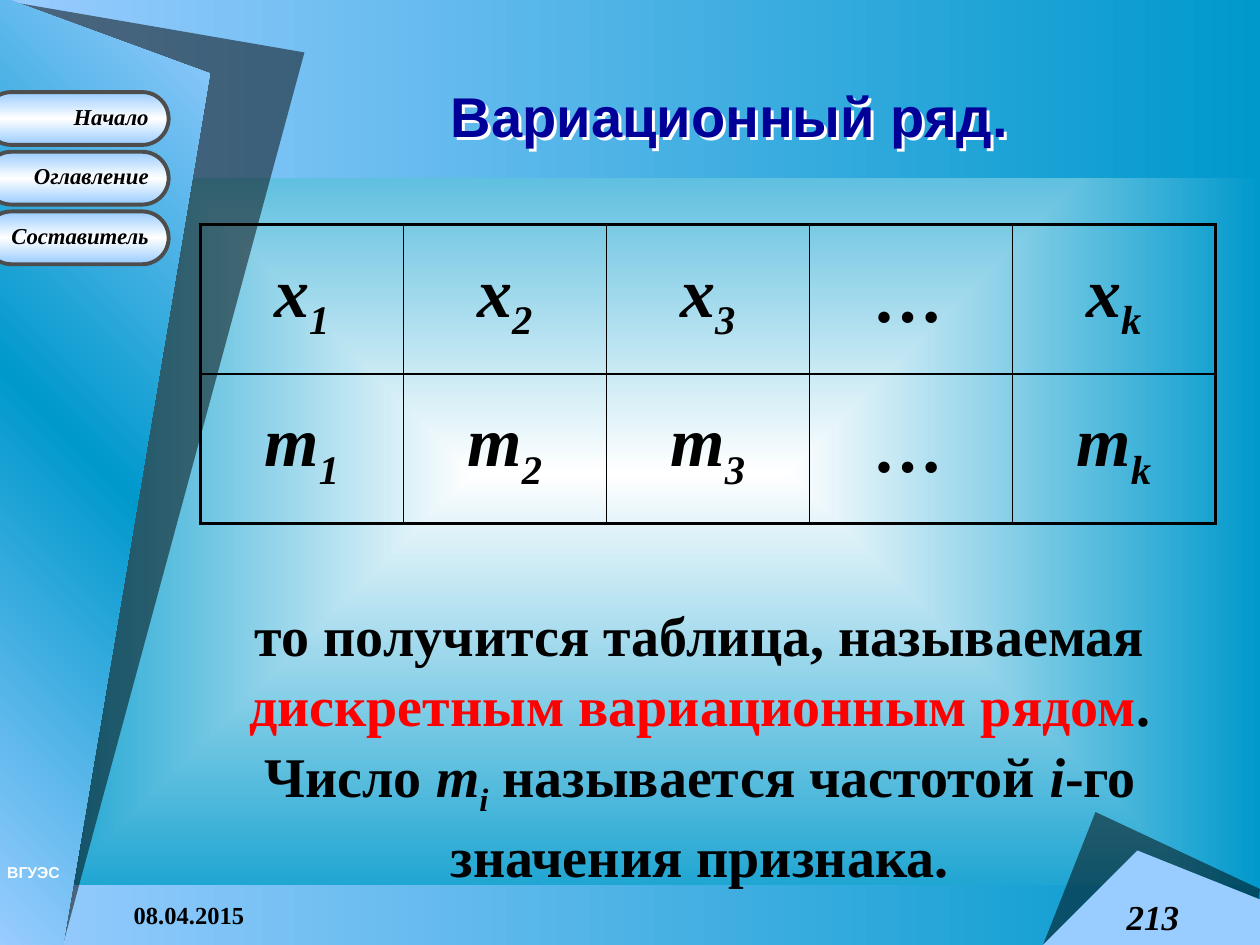
from dataclasses import dataclass

from lxml.etree import SubElement
from pptx import Presentation
from pptx.dml.color import RGBColor
from pptx.enum.shapes import MSO_SHAPE as Preset
from pptx.enum.text import MSO_ANCHOR as Anchor, PP_ALIGN as Align
from pptx.oxml.ns import qn
from pptx.util import Pt


@dataclass(frozen=True)
class Theme:
    sky: str = "99CCFF"
    sea: str = "0099CC"
    white: str = "FFFFFF"
    black: str = "000000"
    outline: str = "4D4D4D"
    heading: str = "000099"
    accent: str = "FF0000"
    sans: str = "Arial"
    serif: str = "Times New Roman"
    title_size: int = 32
    body_size: int = 32
    cell_size: int = 40
    number_size: int = 20
    date_size: int = 14
    button_size: int = 13
    mark_size: int = 9


THEME = Theme()
WIDTH, HEIGHT = 720, 540


def rgb(color):
    return RGBColor.from_string(color)


def set_gradient(grad, colors, angle=None):
    """Spread colors evenly; without an angle they run outward from the centre."""
    for child in list(grad):
        grad.remove(child)
    stops = SubElement(grad, qn("a:gsLst"))
    for i, color in enumerate(colors):
        stop = SubElement(stops, qn("a:gs"), pos=str(100000 * i // (len(colors) - 1)))
        SubElement(stop, qn("a:srgbClr"), val=color)
    if angle is None:
        focus = SubElement(grad, qn("a:path"), {"path": "shape"})
        SubElement(focus, qn("a:fillToRect"), dict.fromkeys("ltrb", "50000"))
    else:
        SubElement(grad, qn("a:lin"), ang=str(angle * 60000), scaled="0")


def paint(shape, colors, angle=0, alpha=None):
    shape.shadow.inherit = False
    shape.line.fill.background()
    if len(colors) > 1:
        shape.fill.gradient()
        set_gradient(shape.element.spPr.find(qn("a:gradFill")), colors, angle)
        return
    shape.fill.solid()
    shape.fill.fore_color.rgb = rgb(colors[0])
    if alpha:
        color = shape.element.spPr.find(qn("a:solidFill"))[0]
        SubElement(color, qn("a:alpha"), val=str(alpha * 1000))


def add_band(slide, top, height):
    band = slide.shapes.add_shape(Preset.RECTANGLE, 0, Pt(top), Pt(WIDTH), Pt(height))
    paint(band, [THEME.sky, THEME.sea])


def add_polygon(slide, points, colors, **look):
    builder = slide.shapes.build_freeform(*points[0], scale=Pt(1))
    builder.add_line_segments(points[1:], close=True)
    paint(builder.convert_to_shape(), colors, **look)


def style(paragraph, size, color=THEME.black, face=THEME.serif, bold=True,
          italic=None, align=Align.CENTER):
    paragraph.alignment = align
    font = paragraph.font
    font.name, font.size, font.bold, font.italic = face, Pt(size), bold, italic
    font.color.rgb = rgb(color)


def add_run(paragraph, text, subscript=False, italic=None, color=None):
    run = paragraph.add_run()
    run.text = text
    if italic:
        run.font.italic = True
    if color:
        run.font.color.rgb = rgb(color)
    if subscript:
        run.font._element.set("baseline", "-25000")


def add_text(slide, box, text, size, anchor=Anchor.TOP, wrap=True, **look):
    frame = slide.shapes.add_textbox(*map(Pt, box)).text_frame
    frame.word_wrap, frame.vertical_anchor = wrap, anchor
    paragraph = frame.paragraphs[0]
    paragraph.text = text
    style(paragraph, size, **look)
    return paragraph


def add_button(slide, top, label):
    button = slide.shapes.add_shape(Preset.ROUNDED_RECTANGLE,
                                    Pt(-8.6), Pt(top), Pt(105), Pt(30.2))
    button.adjustments[0] = 0.5
    paint(button, [THEME.sky, THEME.white, THEME.sky], angle=90)
    button.line.color.rgb = rgb(THEME.outline)
    button.line.width = Pt(2.25)
    frame = button.text_frame
    frame.word_wrap, frame.vertical_anchor = False, Anchor.MIDDLE
    paragraph = frame.paragraphs[0]
    paragraph.text = label
    paragraph.line_spacing = 0.8
    style(paragraph, THEME.button_size, italic=True, align=Align.RIGHT)


def add_backdrop(slide):
    slide.background.fill.gradient()
    set_gradient(slide.element.find(".//" + qn("a:gradFill")), [THEME.white, THEME.sea])
    # Footer band with the page corner
    add_band(slide, 505.5, 34.5)
    add_polygon(slide, [(626.5, 464.5), (WIDTH, 508.5), (715.5, HEIGHT), (596, HEIGHT)],
                [THEME.black], alpha=50)
    add_polygon(slide, [(596, HEIGHT), (650, 486.5), (WIDTH, 514), (WIDTH, HEIGHT)],
                [THEME.sky])
    # Header band with the left wedge
    add_band(slide, 0, 102)
    add_polygon(slide, [(0, 0), (174, 30), (36, HEIGHT), (0, HEIGHT)],
                [THEME.black], alpha=50)
    add_polygon(slide, [(0, -1.5), (119.5, 41.5), (36, HEIGHT), (0, HEIGHT)],
                [THEME.sky, THEME.sea, THEME.sky], angle=315)


def add_title(slide, text):
    title = slide.shapes.title
    title.left, title.top, title.width, title.height = map(Pt, (111, 9.5, 612, 79))
    title.element.getparent().append(title.element)
    title.text_frame.vertical_anchor = Anchor.BOTTOM
    paragraph = title.text_frame.paragraphs[0]
    paragraph.text = text
    style(paragraph, THEME.title_size, THEME.heading, THEME.sans)
    # White shadow behind the letters
    effects = SubElement(title.element.spPr, qn("a:effectLst"))
    shadow = SubElement(effects, qn("a:outerShdw"), dist=str(Pt(2.5)), dir="2700000")
    SubElement(shadow, qn("a:srgbClr"), val=THEME.white)


def set_borders(cell, widths):
    properties = cell._tc.get_or_add_tcPr()
    for i, (side, width) in enumerate(widths.items()):
        line = SubElement(properties, qn(f"a:ln{side}"), w=str(Pt(width)))
        fill = SubElement(line, qn("a:solidFill"))
        SubElement(fill, qn("a:srgbClr"), val=THEME.black)
        properties.insert(i, line)


def add_series_table(slide, variables, indices):
    rows, cols = len(variables), len(indices)
    table = slide.shapes.add_table(rows, cols, Pt(114.5), Pt(128.2),
                                   Pt(116 * cols), Pt(85.5 * rows)).table
    table.first_row = table.horz_banding = False
    for r, variable in enumerate(variables):
        for c, index in enumerate(indices):
            cell = table.cell(r, c)
            cell.vertical_anchor = Anchor.MIDDLE
            cell.fill.background()
            edges = {"L": c == 0, "R": c == cols - 1, "T": r == 0, "B": r == rows - 1}
            set_borders(cell, {s: 2.25 if outer else 1 for s, outer in edges.items()})
            paragraph = cell.text_frame.paragraphs[0]
            style(paragraph, THEME.cell_size, italic=True)
            if index == "…":
                add_run(paragraph, index)
            else:
                add_run(paragraph, variable)
                add_run(paragraph, index, subscript=True)


def add_definition(slide):
    paragraph = add_text(slide, (105, 337.5, 590, 160.5), "", THEME.body_size)
    paragraph.line_spacing = 1.05
    add_run(paragraph, "то получится таблица, называемая ")
    add_run(paragraph, "дискретным вариационным рядом", color=THEME.accent)
    add_run(paragraph, ". Число")
    add_run(paragraph, " m", italic=True)
    add_run(paragraph, "i", italic=True, subscript=True)
    add_run(paragraph, " называется частотой ")
    add_run(paragraph, "i", italic=True)
    add_run(paragraph, "-го значения признака.")


def main():
    deck = Presentation()
    deck.slide_width, deck.slide_height = Pt(WIDTH), Pt(HEIGHT)
    slide = deck.slides.add_slide(deck.slide_layouts[5])
    add_backdrop(slide)
    # Navigation
    for i, label in enumerate(("Начало", "Оглавление", "Составитель")):
        add_button(slide, 52.6 + 34.1 * i, label)
    add_text(slide, (-3, 489.5, 54, 18), "ВГУЭС", THEME.mark_size,
             color=THEME.white, face=THEME.sans, align=Align.LEFT)
    # Footer
    add_text(slide, (45.5, 505.5, 125, 34.5), "08.04.2015", THEME.date_size,
             anchor=Anchor.MIDDLE, wrap=False)
    add_text(slide, (620.5, 507, 76.5, 33), "213", THEME.number_size,
             anchor=Anchor.MIDDLE, wrap=False, italic=True)
    # Content
    add_title(slide, "Вариационный ряд.")
    add_series_table(slide, "xm", "123…k")
    add_definition(slide)
    deck.save("out.pptx")


if __name__ == "__main__":
    main()
